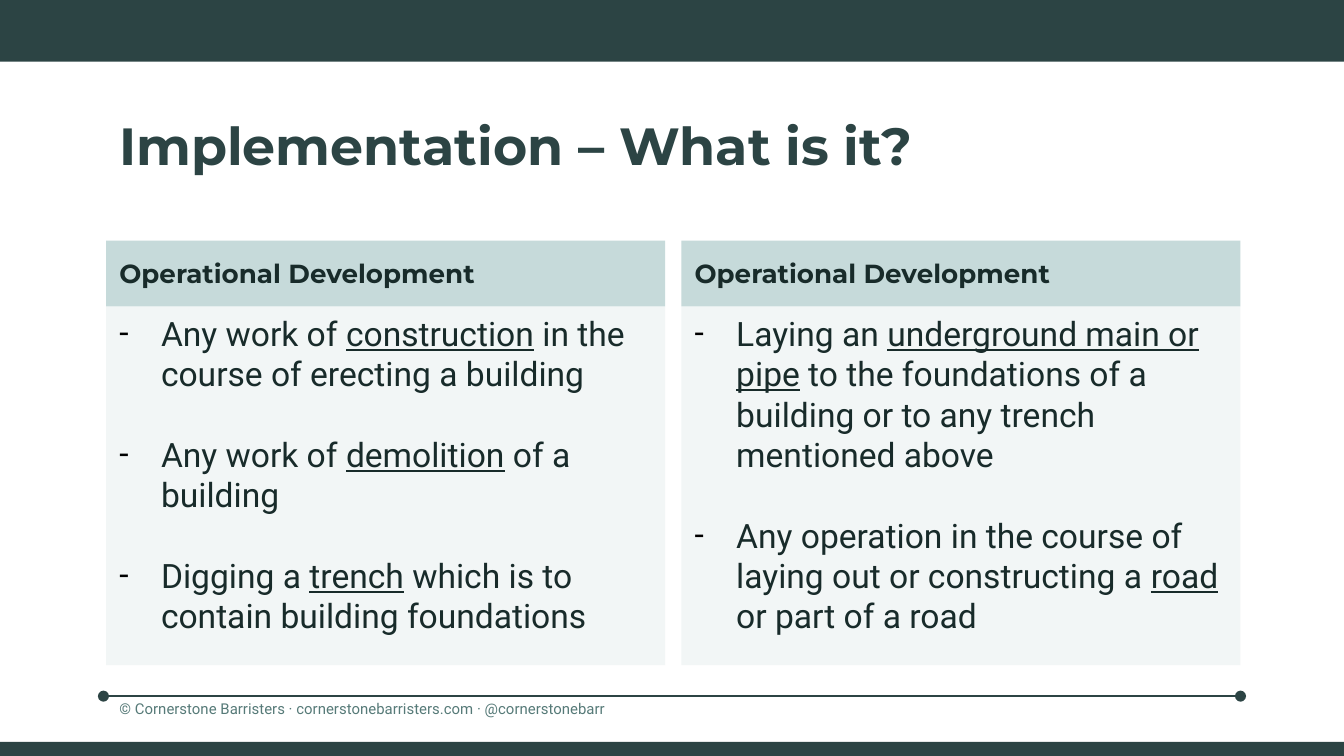
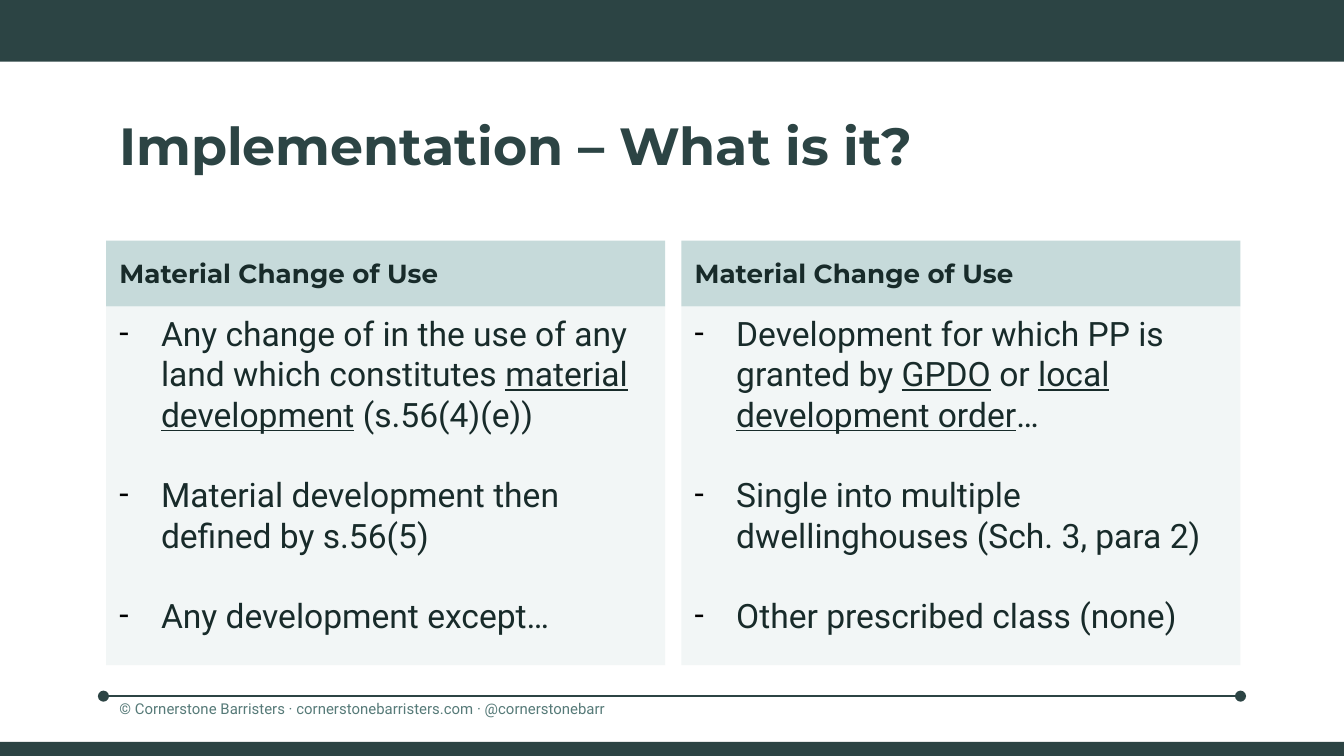
from lxml import etree
from pptx import Presentation
from pptx.dml.color import RGBColor
from pptx.enum.shapes import MSO_CONNECTOR as Connector, MSO_SHAPE as Shape
from pptx.enum.text import MSO_ANCHOR as Anchor, MSO_AUTO_SIZE as AutoSize, PP_ALIGN as Align
from pptx.oxml.ns import qn
from pptx.util import Inches, Pt

# Content: underscores enclose underlined words
TITLE = "Implementation – What is it?"
FOOTER = "© Cornerstone Barristers · cornerstonebarristers.com · @cornerstonebarr"
SLIDES = [
    ("Operational Development", [
        ["Any work of _construction_ in the course of erecting a building",
         "Any work of _demolition_ of a building",
         "Digging a _trench_ which is to contain building foundations"],
        ["Laying an _underground main or pipe_ to the foundations of a building "
         "or to any trench mentioned above",
         "Any operation in the course of laying out or constructing a _road_ "
         "or part of a road"],
    ]),
    ("Material Change of Use", [
        ["Any change of in the use of any land which constitutes "
         "_material development_ (s.56(4)(e))",
         "Material development then defined by s.56(5)",
         "Any development except…"],
        ["Development for which PP is granted by _GPDO_ or "
         "_local development order_…",
         "Single into multiple dwellinghouses (Sch. 3, para 2)",
         "Other prescribed class (none)"],
    ]),
]

# Shared style
DARK, INK, MUTED = "2C4444", "182B2A", "567A78"
HEADER_FILL, PANEL_FILL, BULLET = "C6DADA", "F2F6F6", "000000"
HEADING_FONT, BODY_FONT = "Montserrat", "Roboto"
LEFT, PANEL_WIDTH, PANEL_GAP = 0.79, 4.16, 0.12
HEADER_TOP, HEADER_HEIGHT, PANEL_HEIGHT = 1.79, 0.49, 2.67
BAND_WIDTH = 10.14


def color(value):
    return RGBColor.from_string(value)


def style(font, name, size, tint, bold=False):
    font.name, font.size, font.bold = name, Pt(size), bold
    font.color.rgb = color(tint)


def add_block(page, left, top, width, height, fill):
    block = page.shapes.add_shape(
        Shape.RECTANGLE, Inches(left), Inches(top), Inches(width), Inches(height))
    block.shadow.inherit = False
    block.fill.solid()
    block.fill.fore_color.rgb = color(fill)
    block.line.fill.background()
    return block


def add_label(page, left, top, width, height, text, *font):
    box = page.shapes.add_textbox(
        Inches(left), Inches(top), Inches(width), Inches(height))
    box.text_frame.word_wrap = True
    box.text_frame.text = text
    style(box.text_frame.paragraphs[0].runs[0].font, *font)
    return box


def add_rule(page):
    rule = page.shapes.add_connector(
        Connector.STRAIGHT, Inches(0.77), Inches(5.18), Inches(9.23), Inches(5.18))
    rule.line.color.rgb = color(DARK)
    rule.line.width = Pt(0.75)
    line = rule.line._get_or_add_ln()
    for end in ("a:headEnd", "a:tailEnd"):
        etree.SubElement(line, qn(end), type="oval")
    etree.SubElement(rule._element.spPr, qn("a:effectLst"))


def add_frame(page):
    add_rule(page)
    add_block(page, 0, 0, BAND_WIDTH, 0.46, DARK)
    footer = add_label(page, LEFT, 5.14, 4.95, 0.31, FOOTER, BODY_FONT, 8, MUTED).text_frame
    footer.margin_top = footer.margin_bottom = Inches(0.1)
    footer.auto_size = AutoSize.SHAPE_TO_FIT_TEXT
    add_block(page, 0, 5.52, BAND_WIDTH, 0.11, DARK)
    add_label(page, LEFT, 0.79, 8.44, 0.58, TITLE, HEADING_FONT, 28, DARK, True)


def add_bullet(para, text):
    props = para._p.get_or_add_pPr()
    props.set("marL", str(Inches(0.31)))
    props.set("indent", str(-Inches(0.31)))
    tint = etree.SubElement(props, qn("a:buClr"))
    etree.SubElement(tint, qn("a:srgbClr"), val=BULLET)
    etree.SubElement(props, qn("a:buFont"), typeface=BODY_FONT)
    etree.SubElement(props, qn("a:buChar"), char="-")
    para.alignment = Align.LEFT
    for index, part in enumerate(text.split("_")):
        if part:
            span = para.add_run()
            span.text = part
            style(span.font, BODY_FONT, 18, INK)
            span.font.underline = index % 2 == 1


def add_panel(page, left, heading, bullets):
    # Bullet list
    body = add_block(page, left, HEADER_TOP + HEADER_HEIGHT,
                     PANEL_WIDTH, PANEL_HEIGHT, PANEL_FILL).text_frame
    body.word_wrap = True
    body.vertical_anchor = Anchor.TOP
    for index, text in enumerate(bullets):
        para = body.add_paragraph() if index else body.paragraphs[0]
        add_bullet(para, text)
        if index:
            para.space_before = Pt(21.6)

    # Heading strip
    header = add_block(page, left, HEADER_TOP,
                       PANEL_WIDTH, HEADER_HEIGHT, HEADER_FILL).text_frame
    header.word_wrap = True
    header.vertical_anchor = Anchor.MIDDLE
    header.text = heading
    para = header.paragraphs[0]
    para.alignment = Align.LEFT
    style(para.runs[0].font, HEADING_FONT, 14, INK, True)


def main():
    deck = Presentation()
    deck.slide_width = Inches(10)
    deck.slide_height = deck.slide_width * 9 // 16
    for heading, panels in SLIDES:
        page = deck.slides.add_slide(deck.slide_layouts[6])
        add_frame(page)
        for column, bullets in enumerate(panels):
            add_panel(page, LEFT + column * (PANEL_WIDTH + PANEL_GAP), heading, bullets)
    deck.save("out.pptx")


if __name__ == "__main__":
    main()
